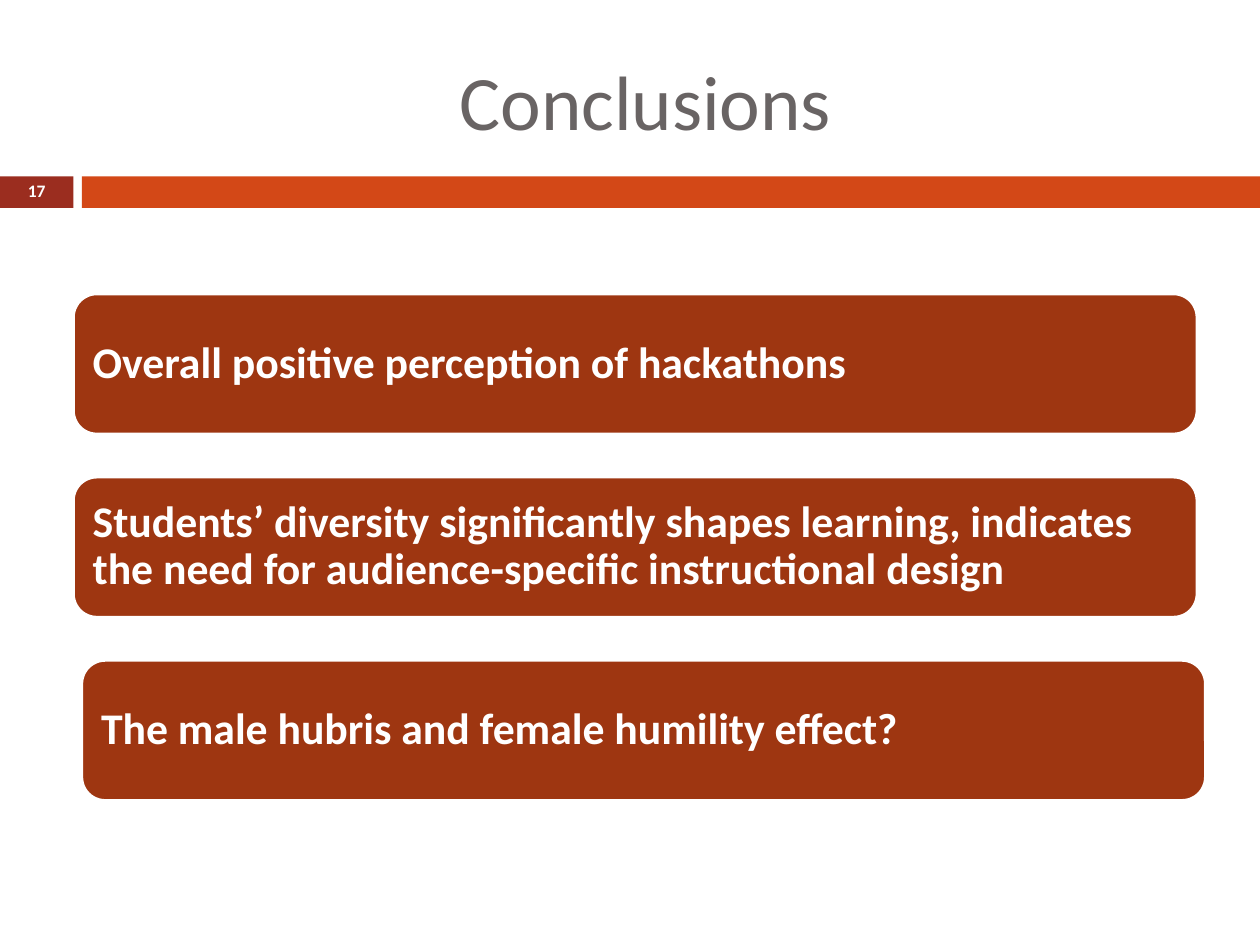
from dataclasses import dataclass

from pptx import Presentation
from pptx.dml.color import RGBColor as RGB
from pptx.enum.shapes import MSO_SHAPE as Shape
from pptx.enum.text import MSO_ANCHOR as Anchor, PP_ALIGN as Align
from pptx.util import Pt


@dataclass(frozen=True)
class Theme:
    font: str = "Calibri"
    white: RGB = RGB(0xFF, 0xFF, 0xFF)
    title: RGB = RGB(0x69, 0x64, 0x64)
    number_bar: RGB = RGB(0x9B, 0x2D, 0x1F)
    main_bar: RGB = RGB(0xD3, 0x48, 0x17)
    card: RGB = RGB(0x9E, 0x36, 0x11)
    title_size: int = 44
    card_size: int = 25
    number_size: int = 10


THEME = Theme()

CARD_TOP, CARD_WIDTH, CARD_HEIGHT, CARD_PITCH = 168, 642, 80, 104.7
CARDS = [  # left edge, statement
    (42, "Overall positive perception of hackathons"),
    (42, "Students’ diversity significantly shapes learning, indicates "
         "the need for audience-specific instructional design"),
    (46.8, "The male hubris and female humility effect?"),
]


def write(box, text, size, color, align, bold=False):
    frame = box.text_frame
    frame.word_wrap = True
    frame.vertical_anchor = Anchor.MIDDLE
    frame.text = text
    para = frame.paragraphs[0]
    para.alignment = align
    for span in para.runs:
        span.font.name = THEME.font
        span.font.size = Pt(size)
        span.font.bold = bold
        span.font.color.rgb = color
    return para


def add_block(page, kind, left, top, width, height, fill):
    block = page.shapes.add_shape(kind, Pt(left), Pt(top), Pt(width), Pt(height))
    block.shadow.inherit = False
    block.fill.solid()
    block.fill.fore_color.rgb = fill
    block.line.fill.background()
    return block


def add_text(page, left, top, width, height, text, size, color, bold=False):
    box = page.shapes.add_textbox(Pt(left), Pt(top), Pt(width), Pt(height))
    return write(box, text, size, color, Align.CENTER, bold)


def add_card(page, left, top, text):
    card = add_block(page, Shape.ROUNDED_RECTANGLE, left, top,
                     CARD_WIDTH, CARD_HEIGHT, THEME.card)
    card.line.color.rgb = THEME.white
    card.line.width = Pt(1.5)
    para = write(card, text, THEME.card_size, THEME.white, Align.LEFT, bold=True)
    para.line_spacing = 0.9


def main():
    deck = Presentation()
    deck.slide_width, deck.slide_height = Pt(720), Pt(540)
    page = deck.slides.add_slide(deck.slide_layouts[6])

    # Header band
    add_block(page, Shape.RECTANGLE, 0, 100.8, 42, 18, THEME.number_bar)
    add_block(page, Shape.RECTANGLE, 46.8, 100.8, 673.2, 18, THEME.main_bar)

    # Title and slide number
    add_text(page, 48, 18, 642, 78, "Conclusions", THEME.title_size, THEME.title)
    number = add_text(page, 0, 100, 42, 19.4, "17",
                      THEME.number_size, THEME.white, bold=True)
    number.line_spacing = 0.9

    # Conclusion cards
    for row, (left, text) in enumerate(CARDS):
        add_card(page, left, CARD_TOP + row * CARD_PITCH, text)

    deck.save("out.pptx")


if __name__ == "__main__":
    main()
